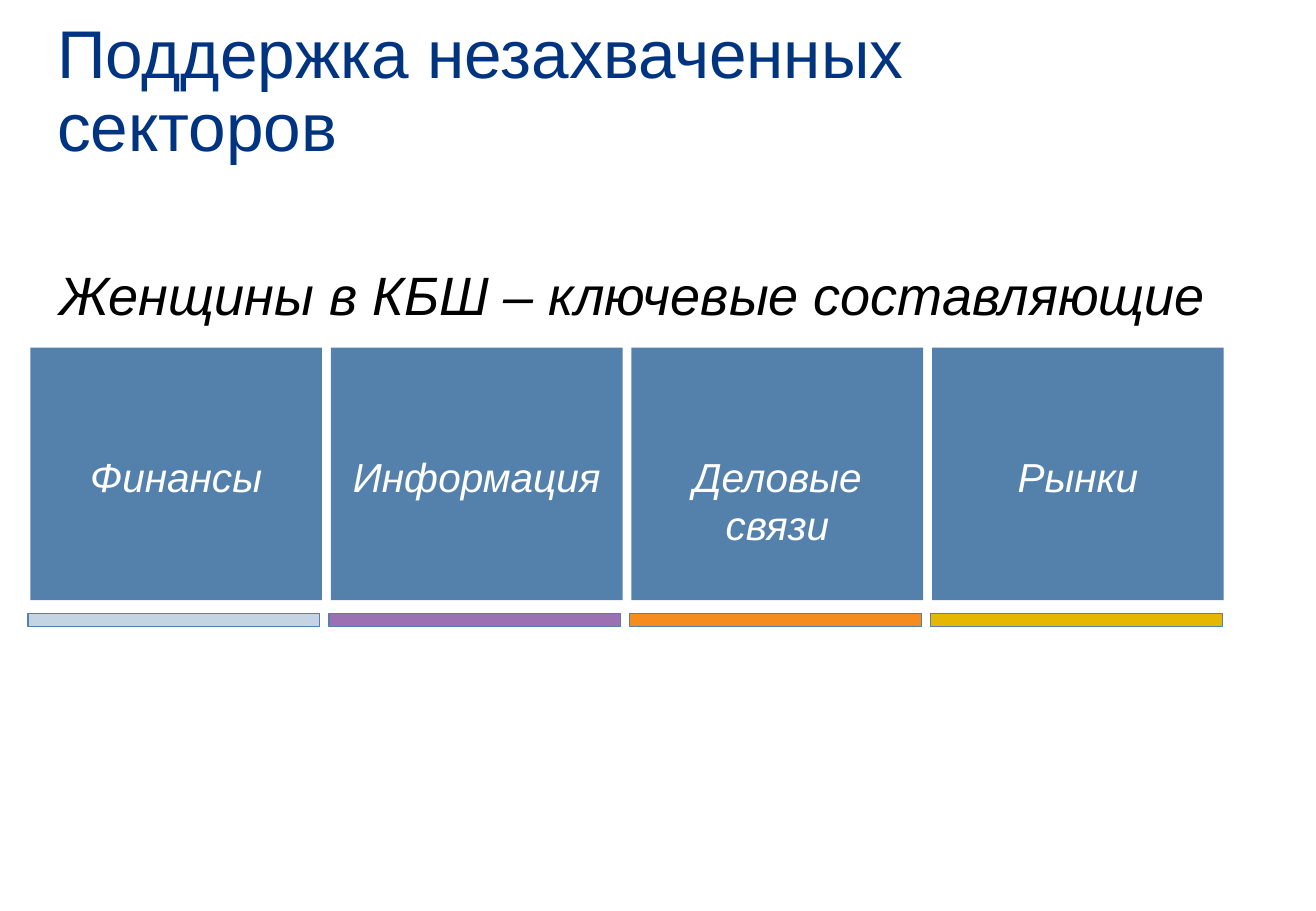
from pptx import Presentation
from pptx.dml.color import RGBColor
from pptx.enum.shapes import MSO_SHAPE
from pptx.enum.text import MSO_ANCHOR, PP_ALIGN
from pptx.util import Pt

RECTANGLE = MSO_SHAPE.RECTANGLE
TOP = MSO_ANCHOR.TOP
LEFT, CENTER = PP_ALIGN.LEFT, PP_ALIGN.CENTER

NAVY = RGBColor(0x00, 0x34, 0x81)
BLACK = RGBColor(0x00, 0x00, 0x00)
WHITE = RGBColor(0xFF, 0xFF, 0xFF)
STEEL = RGBColor(0x53, 0x81, 0xAC)
PALE = RGBColor(0xC4, 0xD4, 0xE2)
PURPLE = RGBColor(0x9C, 0x71, 0xB4)
ORANGE = RGBColor(0xF6, 0x8B, 0x1E)
GOLD = RGBColor(0xE5, 0xB7, 0x00)

COMPONENTS = [
    (["Финансы"], PALE),
    (["Информация"], PURPLE),
    (["Деловые", "связи"], ORANGE),
    (["Рынки"], GOLD),
]
COLUMN_WIDTH = 172.8

TITLE_FONT = {"name": "Arial", "size": Pt(40)}
SUBTITLE_FONT = {"name": "Arial", "size": Pt(32), "italic": True}
TILE_FONT = {"name": "Arial", "size": Pt(24), "italic": True}
TITLE_FRAME = {"word_wrap": True, "vertical_anchor": TOP, "margin_left": 0,
               "margin_top": 0, "margin_right": 0, "margin_bottom": 0}
SUBTITLE_FRAME = {"word_wrap": False, "vertical_anchor": TOP}
TILE_FRAME = {"word_wrap": True, "vertical_anchor": TOP, "margin_top": Pt(61.7)}


def apply_format(target, values):
    for name, value in values.items():
        setattr(target, name, value)


def write_text(shape, lines, frame_format, font_format, color, paragraph_format):
    frame = shape.text_frame
    apply_format(frame, frame_format)
    frame.text = "\n".join(lines)
    for paragraph in frame.paragraphs:
        apply_format(paragraph, paragraph_format)
        apply_format(paragraph.font, font_format)
        paragraph.font.color.rgb = color


def add_rectangle(slide, box, fill):
    shape = slide.shapes.add_shape(RECTANGLE, *map(Pt, box))
    shape.shadow.inherit = False
    shape.fill.solid()
    shape.fill.fore_color.rgb = fill
    return shape


def split_columns(box):
    left, top, width, height = box
    step = (width - COLUMN_WIDTH) / (len(COMPONENTS) - 1)
    return [(left + index * step, top, COLUMN_WIDTH, height)
            for index in range(len(COMPONENTS))]


def add_title(slide, box):
    title = slide.shapes.add_textbox(*map(Pt, box))
    write_text(title, ["Поддержка незахваченных секторов"], TITLE_FRAME,
               TITLE_FONT, NAVY, {"alignment": LEFT, "line_spacing": 0.9})


def add_subtitle(slide, box):
    subtitle = slide.shapes.add_textbox(*map(Pt, box))
    write_text(subtitle, ["Женщины в КБШ – ключевые составляющие"],
               SUBTITLE_FRAME, SUBTITLE_FONT, BLACK, {"alignment": LEFT})


def add_tiles(slide, box):
    for (lines, _), tile_box in zip(COMPONENTS, split_columns(box)):
        tile = add_rectangle(slide, tile_box, STEEL)
        tile.line.fill.background()
        write_text(tile, lines, TILE_FRAME, TILE_FONT, WHITE, {"alignment": CENTER})


def add_bars(slide, box):
    for (_, color), bar_box in zip(COMPONENTS, split_columns(box)):
        bar = add_rectangle(slide, bar_box, color)
        bar.line.color.rgb = STEEL
        bar.line.width = Pt(0.75)


def main():
    presentation = Presentation()
    presentation.slide_width = Pt(779.76)
    presentation.slide_height = Pt(540)
    slide = presentation.slides.add_slide(presentation.slide_layouts[6])
    add_title(slide, (33.8, 12.2, 663.1, 103))
    add_subtitle(slide, (28.1, 151.2, 699.8, 46.1))
    add_tiles(slide, (18, 206, 707.1, 149.8))
    add_bars(slide, (16.6, 363.6, 707.7, 7.9))
    presentation.save("out.pptx")


if __name__ == "__main__":
    main()
